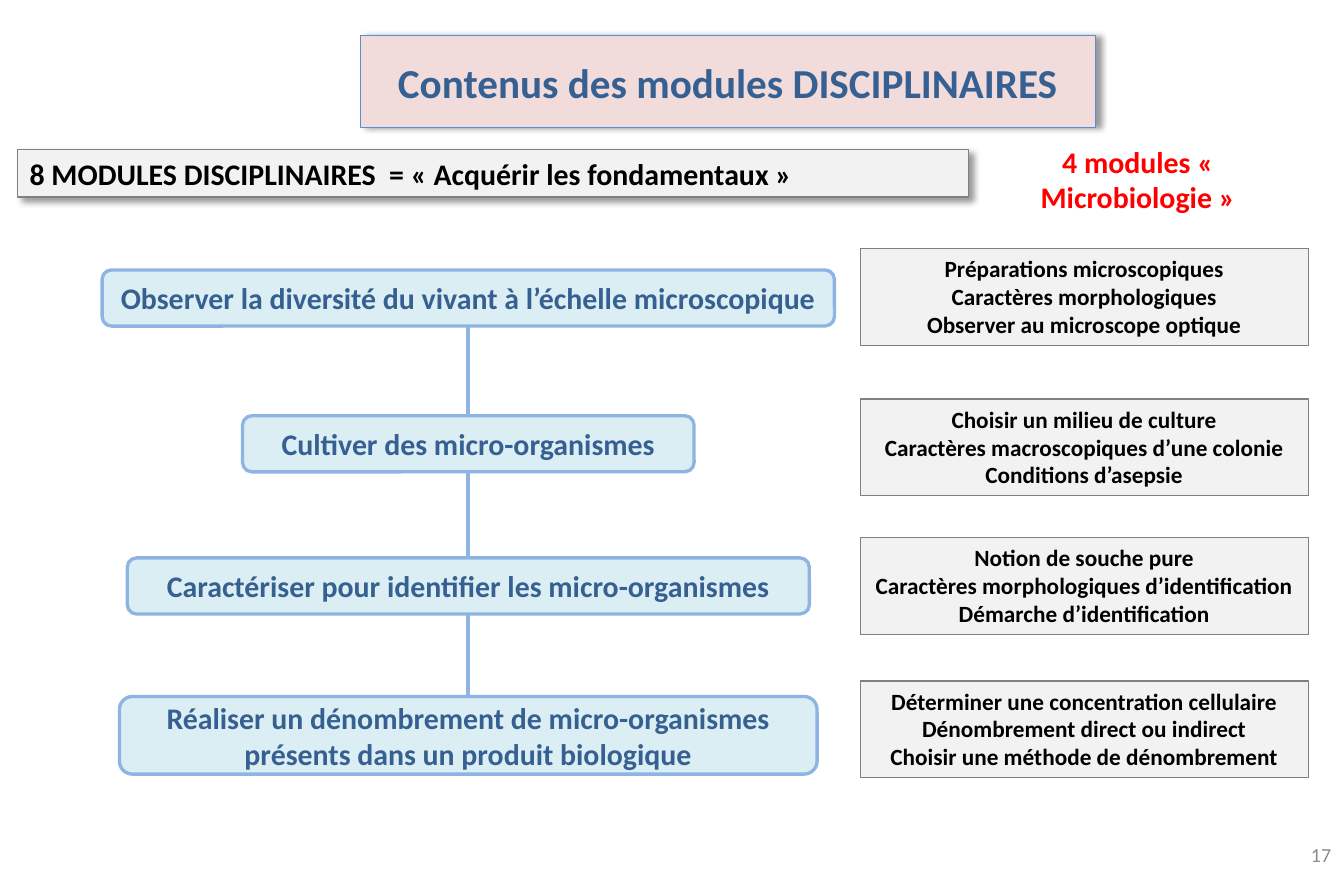
from dataclasses import dataclass
from itertools import pairwise

from lxml.etree import SubElement
from pptx import Presentation
from pptx.dml.color import RGBColor
from pptx.enum.shapes import MSO_CONNECTOR, MSO_SHAPE
from pptx.enum.text import MSO_ANCHOR, PP_ALIGN
from pptx.oxml.ns import qn
from pptx.util import Inches, Pt

COLUMNS, ROWS, CELL = 45, 30, 0.25


@dataclass(frozen=True)
class Theme:
    font: str = "Calibri"
    ink: str = "000000"
    blue: str = "376092"
    red: str = "FF0000"
    muted: str = "8C8C8C"
    pink: str = "F2DCDB"
    pale_blue: str = "DBEEF4"
    grey: str = "F2F2F2"
    title_edge: str = "558ED5"
    step_edge: str = "8EB4E3"
    grey_edge: str = "808080"
    title_size: float = 24.8
    body_size: float = 18
    detail_size: float = 14
    number_size: float = 12


T = Theme()

# Label, width, top and height within the chain
STEPS = [
    ("Observer la diversité du vivant à l’échelle microscopique", 24.52, 0, 1.88),
    ("Cultiver des micro-organismes", 15.12, 4.88, 1.88),
    ("Caractériser pour identifier les micro-organismes", 22.84, 9.64, 1.88),
    ("Réaliser un dénombrement de micro-organismes présents dans un produit biologique",
     23.36, 14.28, 2.6),
]

# Lines and top within the column
DETAILS = [
    ("Préparations microscopiques\nCaractères morphologiques\n"
     "Observer au microscope optique", 0),
    ("Choisir un milieu de culture\nCaractères macroscopiques d’une colonie\n"
     "Conditions d’asepsie", 5.04),
    ("Notion de souche pure\nCaractères morphologiques d’identification\n"
     "Démarche d’identification", 9.68),
    ("Déterminer une concentration cellulaire\nDénombrement direct ou indirect\n"
     "Choisir une méthode de dénombrement", 14.48),
]


def grid(*cells):
    """Turn grid cells into slide lengths."""
    return [Inches(n * CELL) for n in cells]


def rgb(value):
    return RGBColor.from_string(value)


def write(sp, text, size, color, align=PP_ALIGN.CENTER, anchor=MSO_ANCHOR.MIDDLE, bold=True):
    tf = sp.text_frame
    tf.word_wrap = True
    tf.vertical_anchor = anchor
    tf.text = text
    for p in tf.paragraphs:
        p.alignment = align
        for r in p.runs:
            r.font.name, r.font.size, r.font.bold = T.font, Pt(size), bold
            r.font.color.rgb = rgb(color)


def add_box(s, box, kind, fill, edge, weight=0.75):
    sp = s.shapes.add_shape(kind, *grid(*box))
    sp.shadow.inherit = False
    sp.fill.solid()
    sp.fill.fore_color.rgb = rgb(fill)
    sp.line.color.rgb = rgb(edge)
    sp.line.width = Pt(weight)
    return sp


def cast_shadow(sp, angle):
    effects = sp._element.spPr.find(qn("a:effectLst"))
    shadow = SubElement(effects, qn("a:outerShdw"), blurRad=str(Pt(4)), dist=str(Pt(3)),
                        dir=str(angle * 60000), algn="tl", rotWithShape="0")
    color = SubElement(shadow, qn("a:srgbClr"), val=T.ink)
    SubElement(color, qn("a:alpha"), val="40000")


def add_title(s, box):
    sp = add_box(s, box, MSO_SHAPE.RECTANGLE, T.pink, T.title_edge)
    cast_shadow(sp, 0)
    write(sp, "Contenus des modules DISCIPLINAIRES", T.title_size, T.blue)


def add_banner(s, box):
    sp = add_box(s, box, MSO_SHAPE.RECTANGLE, T.grey, T.grey_edge)
    cast_shadow(sp, 45)
    write(sp, "8 MODULES DISCIPLINAIRES  = « Acquérir les fondamentaux »",
          T.body_size, T.ink, PP_ALIGN.LEFT, MSO_ANCHOR.TOP)


def add_module_count(s, box):
    sp = s.shapes.add_textbox(*grid(*box))
    write(sp, "4 modules « Microbiologie »", T.body_size, T.red, anchor=MSO_ANCHOR.TOP)


def add_step_chain(s, box):
    """Centre the steps in the box and link each one to the next."""
    x, y, w, _ = box
    steps = []
    for label, width, top, height in STEPS:
        place = (x + (w - width) / 2, y + top, width, height)
        sp = add_box(s, place, MSO_SHAPE.ROUNDED_RECTANGLE, T.pale_blue, T.step_edge, 2)
        write(sp, label, T.body_size, T.blue)
        steps.append(sp)
    for upper, lower in pairwise(steps):
        link = s.shapes.add_connector(MSO_CONNECTOR.STRAIGHT, 0, 0, 0, 0)
        link.begin_connect(upper, 2)
        link.end_connect(lower, 0)
        link.line.color.rgb = rgb(T.step_edge)
        link.line.width = Pt(2.5)
        SubElement(link._element.spPr, qn("a:effectLst"))


def add_details(s, box):
    x, y, w, h = box
    last_top = DETAILS[-1][1]
    for text, top in DETAILS:
        sp = add_box(s, (x, y + top, w, h - last_top), MSO_SHAPE.RECTANGLE, T.grey, T.grey_edge)
        write(sp, text, T.detail_size, T.ink, anchor=MSO_ANCHOR.TOP)


def add_page_number(s, box):
    sp = s.shapes.add_textbox(*grid(*box))
    write(sp, "17", T.number_size, T.muted, PP_ALIGN.RIGHT, bold=False)


def main():
    prs = Presentation()
    prs.slide_width, prs.slide_height = grid(COLUMNS, ROWS)
    s = prs.slides.add_slide(prs.slide_layouts[6])
    add_page_number(s, (34.48, 27.8, 10.48, 1.6))
    add_title(s, (12.08, 1.2, 24.6, 3.08))
    add_banner(s, (0.6, 5, 31.84, 1.6))
    add_step_chain(s, (3.42, 9.04, 24.52, 16.88))
    add_details(s, (28.8, 8.32, 15, 17.72))
    add_module_count(s, (33.84, 4.6, 8.52, 2.84))
    prs.save("out.pptx")


if __name__ == "__main__":
    main()
